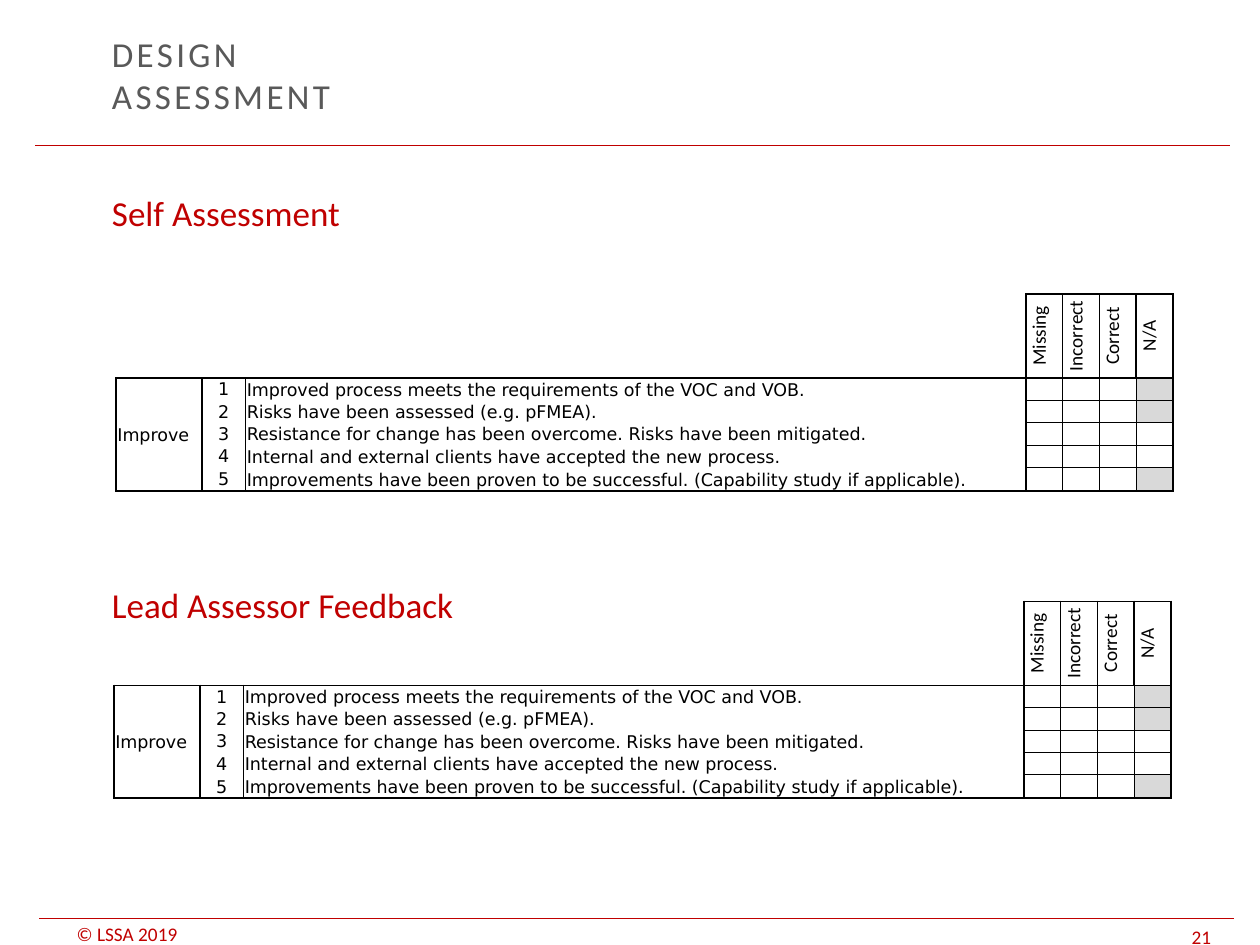
import dataclasses

import lxml.etree
import pptx
import pptx.dml.color
import pptx.enum.shapes
import pptx.enum.text
import pptx.oxml.ns
import pptx.util

Pt = pptx.util.Pt
Anchor = pptx.enum.text.MSO_ANCHOR
Align = pptx.enum.text.PP_ALIGN
qn = pptx.oxml.ns.qn


@dataclasses.dataclass
class Theme:
    red = pptx.dml.color.RGBColor.from_string("C00000")
    grey = pptx.dml.color.RGBColor.from_string("595959")
    black = pptx.dml.color.RGBColor.from_string("000000")
    shade = pptx.dml.color.RGBColor.from_string("D9D9D9")
    heading_font = "Calibri"
    table_font = "DejaVu Sans"
    heading_size = 20
    small_size = 11
    table_size = 10


theme = Theme()
presentation = pptx.Presentation()
presentation.slide_width = Pt(720)
presentation.slide_height = Pt(540)
slide = presentation.slides.add_slide(presentation.slide_layouts[6])


def add_run(paragraph, text, font_name, size, color):
    run = paragraph.add_run()
    run.text = text
    run.font.name = font_name
    run.font.size = Pt(size)
    run.font.color.rgb = color
    return run


def add_text_box(left, top, width, height, anchor, margin):
    frame = slide.shapes.add_textbox(Pt(left), Pt(top), Pt(width), Pt(height)).text_frame
    frame.word_wrap = True
    frame.vertical_anchor = anchor
    frame.margin_top = frame.margin_bottom = Pt(margin)
    return frame.paragraphs[0]


# Header and footer rules
for left, top in ((20.16, 83), (22.32, 525)):
    rule = slide.shapes.add_connector(
        pptx.enum.shapes.MSO_CONNECTOR.STRAIGHT, Pt(left), Pt(top), Pt(left + 682.56), Pt(top))
    rule.line.color.rgb = theme.red
    rule.line.width = Pt(0.75)
    lxml.etree.SubElement(rule._element.spPr, qn("a:effectLst"))

# Footer
for text, left, top, width, height in (("© LSSA 2019", 36.72, 527, 102, 13),
                                       ("21", 673.92, 526.3, 46, 15.8)):
    paragraph = add_text_box(left, top, width, height, Anchor.BOTTOM, 0)
    add_run(paragraph, text, theme.heading_font, theme.small_size, theme.red)

# Title
paragraph = add_text_box(56.88, 18.72, 510, 47.52, Anchor.MIDDLE, 3.6)
for index, word in enumerate(("DESIGN", "ASSESSMENT")):
    if index:
        paragraph.add_line_break()
    run = add_run(paragraph, word, theme.heading_font, theme.heading_size, theme.grey)
    run.font._element.set("spc", "190")

# Section headings
for text, top in (("Self Assessment", 105.84), ("Lead Assessor Feedback", 329.84)):
    paragraph = add_text_box(56.88, top, 500, 32, Anchor.TOP, 3.6)
    add_run(paragraph, text, theme.heading_font, theme.heading_size, theme.red)

# Assessment tables
ratings = ("Missing", "Incorrect", "Correct", "N/A")
criteria = (
    "Improved process meets the requirements of the VOC and VOB.",
    "Risks have been assessed (e.g. pFMEA).",
    "Resistance for change has been overcome. Risks have been mitigated.",
    "Internal and external clients have accepted the new process.",
    "Improvements have been proven to be successful. (Capability study if applicable).",
)
always_applicable = (1, 2, 5)
column_widths = [49, 25, 446] + [21] * 4
row_heights = [48] + [12.8] * 4 + [13.4]
first_rating = 3

texts = {(0, first_rating + index): rating for index, rating in enumerate(ratings)}
texts[1, 0] = "Improve"
for number, criterion in enumerate(criteria, 1):
    texts[number, 1] = str(number)
    texts[number, 2] = criterion

for left, top in ((66.4, 168), (65.2, 343.6)):
    table = slide.shapes.add_table(
        len(row_heights), len(column_widths), Pt(left), Pt(top),
        Pt(sum(column_widths)), Pt(sum(row_heights))).table
    table.first_row = table.horz_banding = False
    for column, width in zip(table.columns, column_widths):
        column.width = Pt(width)
    for row, height in zip(table.rows, row_heights):
        row.height = Pt(height)
    table.cell(1, 0).merge(table.cell(5, 0))

    for row in range(len(row_heights)):
        for column in range(len(column_widths)):
            cell = table.cell(row, column)
            cell.margin_left = cell.margin_right = cell.margin_top = Pt(0.72)
            cell.margin_bottom = Pt(0)
            is_rating = column >= first_rating
            cell.vertical_anchor = Anchor.MIDDLE if column < 2 else Anchor.BOTTOM
            if column == 6 and row in always_applicable:
                cell.fill.solid()
                cell.fill.fore_color.rgb = theme.shade
            else:
                cell.fill.background()

            # Cell text; empty cells get a small size so rows keep their height
            paragraph = cell.text_frame.paragraphs[0]
            paragraph.alignment = Align.CENTER if column == 1 or is_rating else Align.LEFT
            if (row, column) in texts:
                font_name, size = ((theme.heading_font, theme.small_size) if row == 0
                                   else (theme.table_font, theme.table_size))
                add_run(paragraph, texts[row, column], font_name, size, theme.black)
            else:
                lxml.etree.SubElement(paragraph._p, qn("a:endParaRPr"), sz="600")
            properties = cell._tc.get_or_add_tcPr()
            if row == 0 and is_rating:
                properties.set("vert", "vert270")

            # Borders: thin inside the rating grid, 1 pt elsewhere
            weights = []
            for edge in (column, column + 1):
                thin = edge == 4 or (edge == 6 and row > 0)
                weights.append(0 if row == 0 and edge < first_rating else 0.5 if thin else 1)
            for edge in (row, row + 1):
                if edge in (1, 6) or (edge == 0 and is_rating) or (edge and column == 0):
                    weights.append(1)
                else:
                    weights.append(0.5 if is_rating else 0)
            for index, (side, weight) in enumerate(zip("LRTB", weights)):
                border = lxml.etree.Element(qn("a:ln" + side), w=str(int(Pt(weight))))
                if weight:
                    fill = lxml.etree.SubElement(border, qn("a:solidFill"))
                    lxml.etree.SubElement(fill, qn("a:srgbClr"), val=str(theme.black))
                else:
                    lxml.etree.SubElement(border, qn("a:noFill"))
                properties.insert(index, border)

presentation.save("out.pptx")
